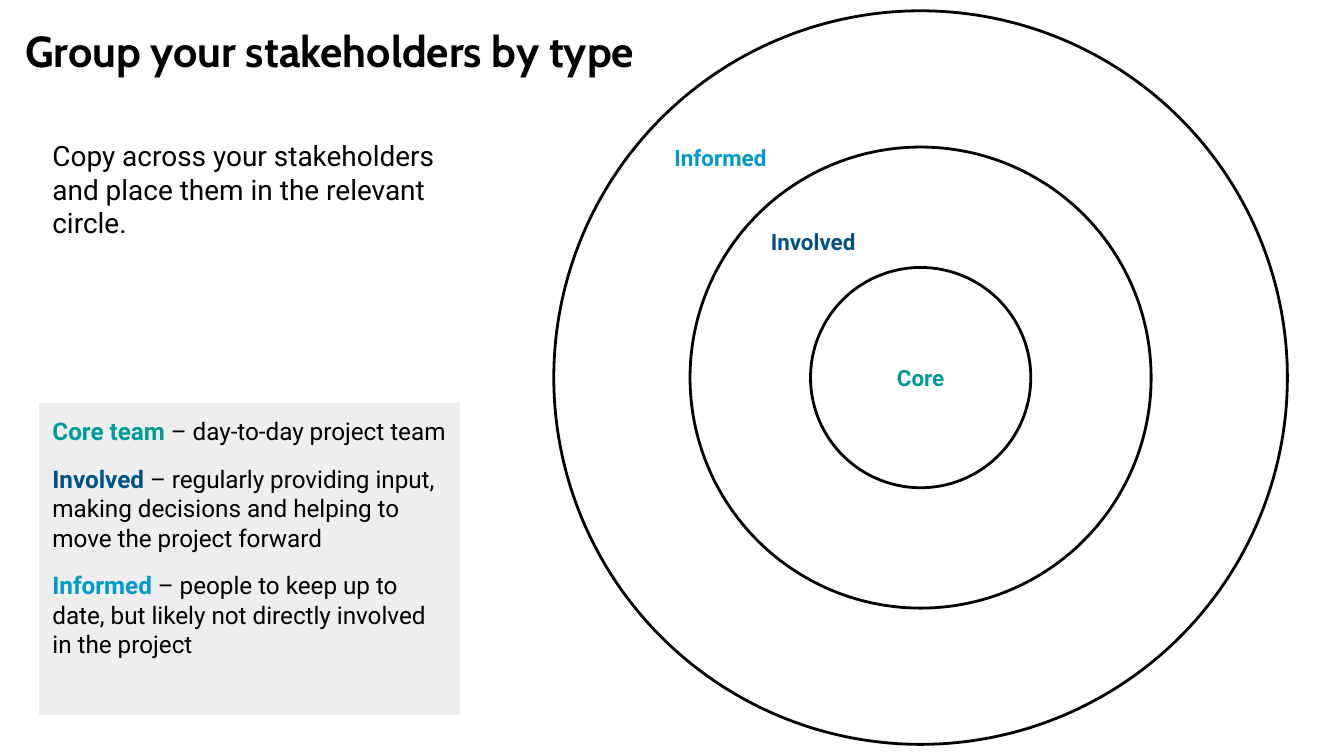
from dataclasses import dataclass

from pptx import Presentation
from pptx.dml.color import RGBColor
from pptx.enum.shapes import MSO_SHAPE
from pptx.enum.text import MSO_ANCHOR, PP_ALIGN
from pptx.shapes.autoshape import Shape
from pptx.slide import Slide
from pptx.text.text import TextFrame
from pptx.util import Pt

OVAL, RECTANGLE = MSO_SHAPE.OVAL, MSO_SHAPE.RECTANGLE
TOP, MIDDLE = MSO_ANCHOR.TOP, MSO_ANCHOR.MIDDLE
LEFT, CENTER = PP_ALIGN.LEFT, PP_ALIGN.CENTER

BLACK = RGBColor(0x00, 0x00, 0x00)
PANEL_GREY = RGBColor(0xEE, 0xEE, 0xEE)
CORE_GREEN = RGBColor(0x00, 0x9B, 0x99)
INVOLVED_BLUE = RGBColor(0x00, 0x51, 0x87)
INFORMED_BLUE = RGBColor(0x00, 0x99, 0xCC)

HEADING_FONT, BODY_FONT = "Cabin", "Roboto"
INSET = 7.2
RING_CENTER_X, RING_CENTER_Y = 493.2, 202.3


@dataclass(frozen=True)
class Box:
    left: float
    top: float
    width: float
    height: float


@dataclass(frozen=True)
class Span:
    text: str
    size: float
    color: RGBColor = BLACK
    bold: bool = False
    font: str = BODY_FONT


@dataclass(frozen=True)
class Ring:
    label: str
    diameter: float
    color: RGBColor
    top_inset: float = INSET
    anchor: MSO_ANCHOR = TOP
    align: PP_ALIGN = LEFT


@dataclass(frozen=True)
class Definition:
    term: str
    meaning: str
    color: RGBColor


RINGS = [
    Ring("Informed", 393, INFORMED_BLUE, top_inset=14),
    Ring("Involved", 247, INVOLVED_BLUE),
    Ring("Core", 118, CORE_GREEN, anchor=MIDDLE, align=CENTER),
]

DEFINITIONS = [
    Definition("Core team", " – day-to-day project team", CORE_GREEN),
    Definition("Involved", " – regularly providing input, making decisions "
               "and helping to move the project forward", INVOLVED_BLUE),
    Definition("Informed", " – people to keep up to date, but likely not "
               "directly involved in the project", INFORMED_BLUE),
]


def write(frame: TextFrame, paragraphs: list[list[Span]], gap: float = 0,
          top_inset: float = INSET, anchor: MSO_ANCHOR = TOP,
          align: PP_ALIGN = LEFT) -> None:
    frame.word_wrap = True
    frame.vertical_anchor = anchor
    frame.margin_left = frame.margin_right = frame.margin_bottom = Pt(INSET)
    frame.margin_top = Pt(top_inset)
    for index, spans in enumerate(paragraphs):
        paragraph = frame.add_paragraph() if index else frame.paragraphs[0]
        paragraph.alignment = align
        if index:
            paragraph.space_before = Pt(gap)
        for span in spans:
            run = paragraph.add_run()
            run.text = span.text
            run.font.name = span.font
            run.font.size = Pt(span.size)
            run.font.bold = span.bold
            run.font.color.rgb = span.color


def add_text(slide: Slide, box: Box, span: Span) -> None:
    text_box = slide.shapes.add_textbox(
        Pt(box.left), Pt(box.top), Pt(box.width), Pt(box.height))
    write(text_box.text_frame, [[span]])


def add_figure(slide: Slide, kind: MSO_SHAPE, box: Box) -> Shape:
    figure = slide.shapes.add_shape(
        kind, Pt(box.left), Pt(box.top), Pt(box.width), Pt(box.height))
    figure.shadow.inherit = False
    return figure


def add_ring(slide: Slide, ring: Ring) -> None:
    radius = ring.diameter / 2
    circle = add_figure(slide, OVAL, Box(
        RING_CENTER_X - radius, RING_CENTER_Y - radius,
        ring.diameter, ring.diameter))
    circle.fill.background()
    circle.line.color.rgb = BLACK
    circle.line.width = Pt(1.5)
    write(circle.text_frame, [[Span(ring.label, 12, ring.color, True)]],
          top_inset=ring.top_inset, anchor=ring.anchor, align=ring.align)


def add_legend(slide: Slide, box: Box, definitions: list[Definition]) -> None:
    panel = add_figure(slide, RECTANGLE, box)
    panel.fill.solid()
    panel.fill.fore_color.rgb = PANEL_GREY
    panel.line.fill.background()
    write(panel.text_frame,
          [[Span(d.term, 13, d.color, True), Span(d.meaning, 13)]
           for d in definitions], gap=10)


def main() -> None:
    deck = Presentation()
    deck.slide_width, deck.slide_height = Pt(720), Pt(405)
    slide = deck.slides.add_slide(deck.slide_layouts[6])

    # Concentric stakeholder circles, outermost first
    for ring in RINGS:
        add_ring(slide, ring)

    # Title and instruction
    add_text(slide, Box(6.5, 5.8, 672.5, 42.5),
             Span("Group your stakeholders by type", 23.2, bold=True,
                  font=HEADING_FONT))
    add_text(slide, Box(21, 67, 236, 69),
             Span("Copy across your stakeholders and place them in the "
                  "relevant circle.", 15))

    # Meaning of each circle
    add_legend(slide, Box(21, 216, 225.5, 167), DEFINITIONS)

    deck.save("out.pptx")


if __name__ == "__main__":
    main()
